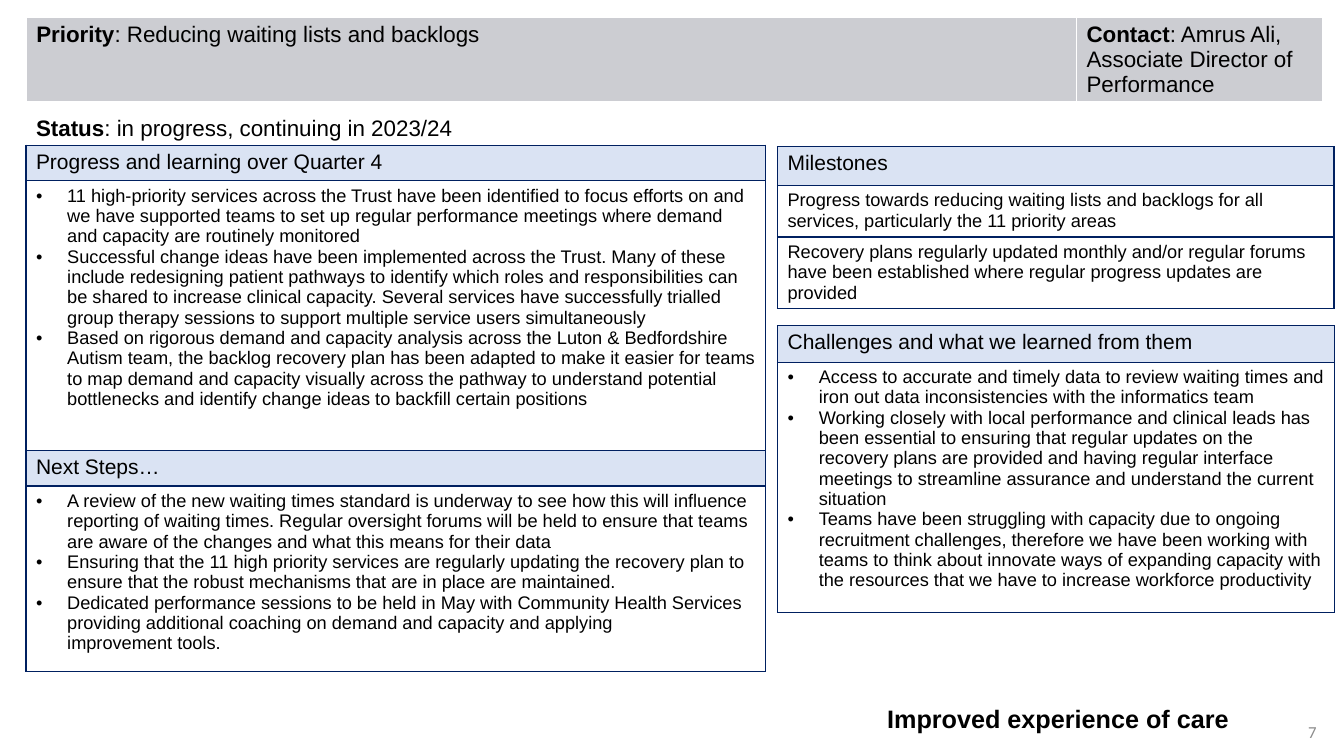
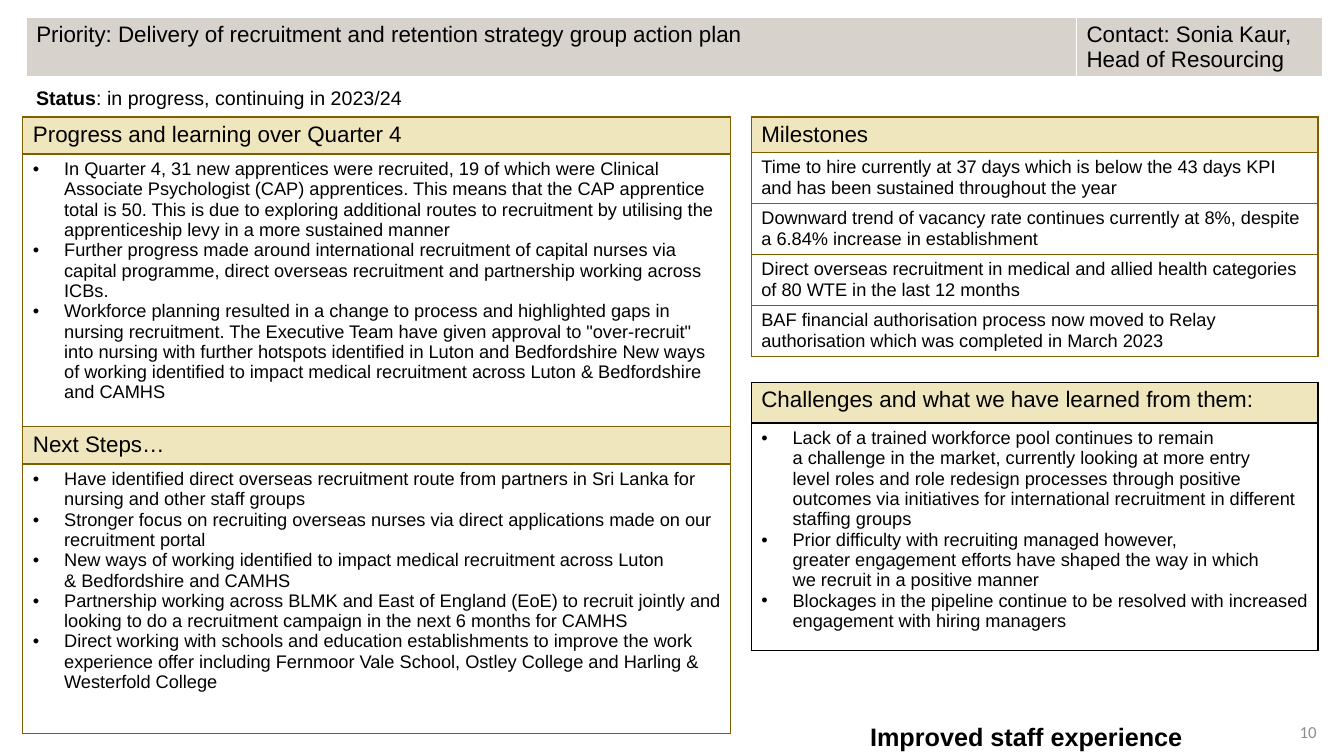
from dataclasses import dataclass
from enum import Enum

from lxml.etree import SubElement
from pptx import Presentation
from pptx.dml.color import RGBColor
from pptx.enum.text import MSO_ANCHOR, PP_ALIGN
from pptx.oxml.ns import qn
from pptx.util import Inches, Pt

# Shared look; every length below is a percentage of the slide's width or height
WIDTH, HEIGHT = Inches(13.33), Inches(7.5)
BLACK = RGBColor(0x00, 0x00, 0x00)
WHITE = RGBColor(0xFF, 0xFF, 0xFF)
GREY = RGBColor(0x8C, 0x8C, 0x8C)
NAVY = RGBColor(0x00, 0x20, 0x60)
PALE_BLUE = RGBColor(0xDA, 0xE3, 0xF3)
COOL_GREY = RGBColor(0xCC, 0xCD, 0xD2)
BROWN = RGBColor(0x7F, 0x60, 0x00)
CREAM = RGBColor(0xF0, 0xE6, 0xBD)
WARM_GREY = RGBColor(0xD8, 0xD2, 0xCC)
BODY_SIZE = 13
BAND_SIZE = 16
BAND_LEFT, BAND_TOP = 1.95, 2.3
BAND_COLUMNS = (78.15, 18.3)
BULLET_INDENT = Inches(0.31)
NBSP = chr(160)  # keeps two words on one line


class Kind(Enum):
    HEADING = "heading"
    PLAIN = "plain"
    BULLETS = "bullets"


@dataclass(frozen=True)
class Box:
    left: float
    top: float
    width: float
    height: float


@dataclass(frozen=True)
class Row:
    height: float
    kind: Kind
    lines: tuple[str, ...]


@dataclass(frozen=True)
class Panel:
    left: float
    top: float
    width: float
    border: RGBColor
    rows: tuple[Row, ...]


@dataclass(frozen=True)
class Report:
    priority: str
    contact: str
    bold_labels: bool
    band_height: float
    band_fill: RGBColor
    heading_fill: RGBColor
    heading_size: int
    status: Box
    status_size: int
    panels: tuple[Panel, ...]
    theme: str
    theme_box: Box
    number: int


def across(share: float) -> int:
    return round(WIDTH * share / 100)


def down(share: float) -> int:
    return round(HEIGHT * share / 100)


def style(para, size, colour=BLACK, font="Arial", bold=False) -> None:
    for span in para.runs:
        span.font.name, span.font.size = font, Pt(size)
        span.font.color.rgb, span.font.bold = colour, bold


def write_labelled(para, label, text, size, bold_label=True) -> None:
    para.text = label
    para.add_run().text = f": {text}"
    style(para, size)
    para.runs[0].font.bold = bold_label


def add_bullet(para) -> None:
    props = para._p.get_or_add_pPr()
    props.set("marL", str(BULLET_INDENT))
    props.set("indent", str(-BULLET_INDENT))
    SubElement(props, qn("a:buFont"), typeface="Arial")
    SubElement(props, qn("a:buChar"), char="•")


def finish_cell(cell, border: RGBColor, fill: RGBColor | None) -> None:
    cell.margin_bottom = 0  # lets the row keep its set height
    props = cell._tc.get_or_add_tcPr()
    for side in ("a:lnL", "a:lnR", "a:lnT", "a:lnB"):
        line = SubElement(props, qn(side), w=str(Pt(1)))
        solid = SubElement(line, qn("a:solidFill"))
        SubElement(solid, qn("a:srgbClr"), val=str(border))
    if fill is None:
        cell.fill.background()
    else:
        cell.fill.solid()
        cell.fill.fore_color.rgb = fill


def add_grid(page, left, top, columns, rows):
    """Add an unstyled table with the given column widths and row heights."""
    frame = page.shapes.add_table(len(rows), len(columns), across(left), down(top),
                                  across(sum(columns)), down(sum(rows)))
    table = frame.table
    table.first_row = table.horz_banding = False
    for column, width in zip(table.columns, columns):
        column.width = across(width)
    for row, height in zip(table.rows, rows):
        row.height = down(height)
    return table


def add_band(page, report: Report) -> None:
    table = add_grid(page, BAND_LEFT, BAND_TOP, BAND_COLUMNS, (report.band_height,))
    entries = (("Priority", report.priority), ("Contact", report.contact))
    for cell, (label, text) in zip(table.rows[0].cells, entries):
        write_labelled(cell.text_frame.paragraphs[0], label, text, BAND_SIZE, report.bold_labels)
        finish_cell(cell, WHITE, report.band_fill)


def add_panel(page, panel: Panel, report: Report) -> None:
    heights = [row.height for row in panel.rows]
    table = add_grid(page, panel.left, panel.top, (panel.width,), heights)
    for index, row in enumerate(panel.rows):
        cell = table.cell(index, 0)
        cell.text_frame.text = "\n".join(row.lines)
        is_heading = row.kind is Kind.HEADING
        for para in cell.text_frame.paragraphs:
            style(para, report.heading_size if is_heading else BODY_SIZE)
            if row.kind is Kind.BULLETS:
                add_bullet(para)
        finish_cell(cell, panel.border, report.heading_fill if is_heading else None)


def add_text_box(page, box: Box):
    shape = page.shapes.add_textbox(across(box.left), down(box.top),
                                    across(box.width), down(box.height))
    shape.text_frame.word_wrap = True
    return shape.text_frame


def add_report(deck, report: Report) -> None:
    page = deck.slides.add_slide(deck.slide_layouts[6])
    add_band(page, report)
    status = add_text_box(page, report.status)
    write_labelled(status.paragraphs[0], "Status", "in progress, continuing in 2023/24",
                   report.status_size)
    for panel in report.panels:
        add_panel(page, panel, report)

    # Footer: theme and page number
    theme = add_text_box(page, report.theme_box).paragraphs[0]
    theme.text = report.theme
    theme.line_spacing, theme.space_after = 1.15, Pt(10)
    style(theme, 18, bold=True)
    frame = add_text_box(page, Box(76.2, 94.13, 22.5, 5.33))
    frame.vertical_anchor = MSO_ANCHOR.MIDDLE
    number = frame.paragraphs[0]
    number.text = str(report.number)
    number.alignment = PP_ALIGN.RIGHT
    style(number, 12, GREY, "Calibri")


def heading(height: float, text: str) -> Row:
    return Row(height, Kind.HEADING, (text,))


def plain(height: float, text: str) -> Row:
    return Row(height, Kind.PLAIN, (text,))


def bullets(height: float, *lines: str) -> Row:
    return Row(height, Kind.BULLETS, lines)


# Content
WAITING_LISTS = Report(
    priority="Reducing waiting lists and backlogs",
    contact="Amrus Ali, Associate Director of Performance",
    bold_labels=True, band_height=11.2, band_fill=COOL_GREY,
    heading_fill=PALE_BLUE, heading_size=15,
    status=Box(1.95, 14.4, 37, 4.9), status_size=16,
    panels=(
        Panel(57.85, 19.4, 41.4, NAVY, (
            heading(5.1, "Milestones"),
            plain(6.85, "Progress towards reducing waiting lists and backlogs for all services, particularly the 11 priority areas"),
            plain(9.45, "Recovery plans regularly updated monthly and/or regular forums have been established where regular progress updates are provided"),
        )),
        Panel(1.93, 19.2, 55, NAVY, (
            heading(4.7, "Progress and learning over Quarter 4"),
            bullets(
                35.7,
                "11 high-priority services across the Trust have been identified to focus efforts on and we have supported teams to set up regular performance meetings where demand and capacity are routinely monitored",
                "Successful change ideas have been implemented across the Trust. Many of these include redesigning patient pathways to identify which roles and responsibilities can be shared to increase clinical capacity. Several services have successfully trialled group therapy sessions to support multiple service users simultaneously",
                "Based on rigorous demand and capacity analysis across the Luton & Bedfordshire Autism team, the backlog recovery plan has been adapted to make it easier for teams to map demand and capacity visually across the pathway to understand potential bottlenecks and identify change ideas to backfill certain positions"),
            heading(4.7, "Next Steps…"),
            bullets(
                24.5,
                "A review of the new waiting times standard is underway to see how this will influence reporting of waiting times. Regular oversight forums will be held to ensure that teams are aware of the changes and what this means for their data",
                "Ensuring that the 11 high priority services are regularly updating the recovery plan to ensure that the robust mechanisms that are in place are maintained.",
                f"Dedicated performance sessions to be held in May with Community Health Services providing additional coaching on demand and capacity and applying improvement{NBSP}tools."),
        )),
        Panel(57.85, 43.1, 41.45, NAVY, (
            heading(4.8, "Challenges and what we learned from them"),
            bullets(
                33.1,
                "Access to accurate and timely data to review waiting times and iron out data inconsistencies with the informatics team",
                "Working closely with local performance and clinical leads has been essential to ensuring that regular updates on the recovery plans are provided and having regular interface meetings to streamline assurance and understand the current situation",
                "Teams have been struggling with capacity due to ongoing recruitment challenges, therefore we have been working with teams to think about innovate ways of expanding capacity with the resources that we have to increase workforce productivity"),
        )),
    ),
    theme="Improved experience of care", theme_box=Box(65.27, 91.73, 27.7, 6), number=7,
)

RECRUITMENT = Report(
    priority="Delivery of recruitment and retention strategy group action plan",
    contact="Sonia Kaur, Head of Resourcing",
    bold_labels=False, band_height=7.85, band_fill=WARM_GREY,
    heading_fill=CREAM, heading_size=16,
    status=Box(1.95, 10.75, 37, 4.5), status_size=14,
    panels=(
        Panel(55.9, 15.47, 42.16, BROWN, (
            heading(4.7, "Milestones"),
            plain(6.75, "Time to hire currently at 37 days which is below the 43 days KPI and has been sustained throughout the year"),
            plain(6.75, f"Downward trend of vacancy rate continues currently at 8%, despite a{NBSP}6.84% increase in establishment"),
            plain(6.75, "Direct overseas recruitment in medical and allied health categories of 80 WTE in the last 12 months"),
            plain(6.75, "BAF financial authorisation process now moved to Relay authorisation which was completed in March 2023"),
        )),
        Panel(1.7, 15.47, 52.66, BROWN, (
            heading(4.9, "Progress and learning over Quarter 4"),
            bullets(
                36.1,
                "In Quarter 4, 31 new apprentices were recruited, 19 of which were Clinical Associate Psychologist (CAP) apprentices. This means that the CAP apprentice total is 50. This is due to exploring additional routes to recruitment by utilising the apprenticeship levy in a more sustained manner",
                "Further progress made around international recruitment of capital nurses via capital programme, direct overseas recruitment and partnership working across ICBs.",
                "Workforce planning resulted in a change to process and highlighted gaps in nursing recruitment. The Executive Team have given approval to \"over-recruit\" into nursing with further hotspots identified in Luton and Bedfordshire New ways of working identified to impact medical recruitment across Luton & Bedfordshire and CAMHS"),
            heading(4.9, "Next Steps…"),
            bullets(
                35.7,
                "Have identified direct overseas recruitment route from partners in Sri Lanka for nursing and other staff groups",
                "Stronger focus on recruiting overseas nurses via direct applications made on our recruitment portal",
                f"New ways of working identified to impact medical recruitment across Luton &{NBSP}Bedfordshire and CAMHS",
                "Partnership working across BLMK and East of England (EoE) to recruit jointly and looking to do a recruitment campaign in the next 6 months for CAMHS",
                "Direct working with schools and education establishments to improve the work experience offer including Fernmoor Vale School, Ostley College and Harling & Westerfold College"),
        )),
        Panel(55.9, 50.6, 42.16, BLACK, (
            heading(5.35, "Challenges and what we have learned from them:"),
            bullets(
                30.1,
                f"Lack of a trained workforce pool continues to remain a{NBSP}challenge in the market, currently looking at more entry level{NBSP}roles and role redesign processes through positive outcomes via initiatives for international recruitment in different staffing groups",
                f"Prior difficulty with recruiting managed however, greater{NBSP}engagement efforts have shaped the way in which we{NBSP}recruit{NBSP}in{NBSP}a positive manner",
                "Blockages in the pipeline continue to be resolved with increased engagement with hiring managers"),
        )),
    ),
    theme="Improved staff experience", theme_box=Box(64, 94.13, 26, 5.6), number=10,
)


def main() -> None:
    deck = Presentation()
    deck.slide_width, deck.slide_height = WIDTH, HEIGHT
    for report in (WAITING_LISTS, RECRUITMENT):
        add_report(deck, report)
    deck.save("out.pptx")


if __name__ == "__main__":
    main()
